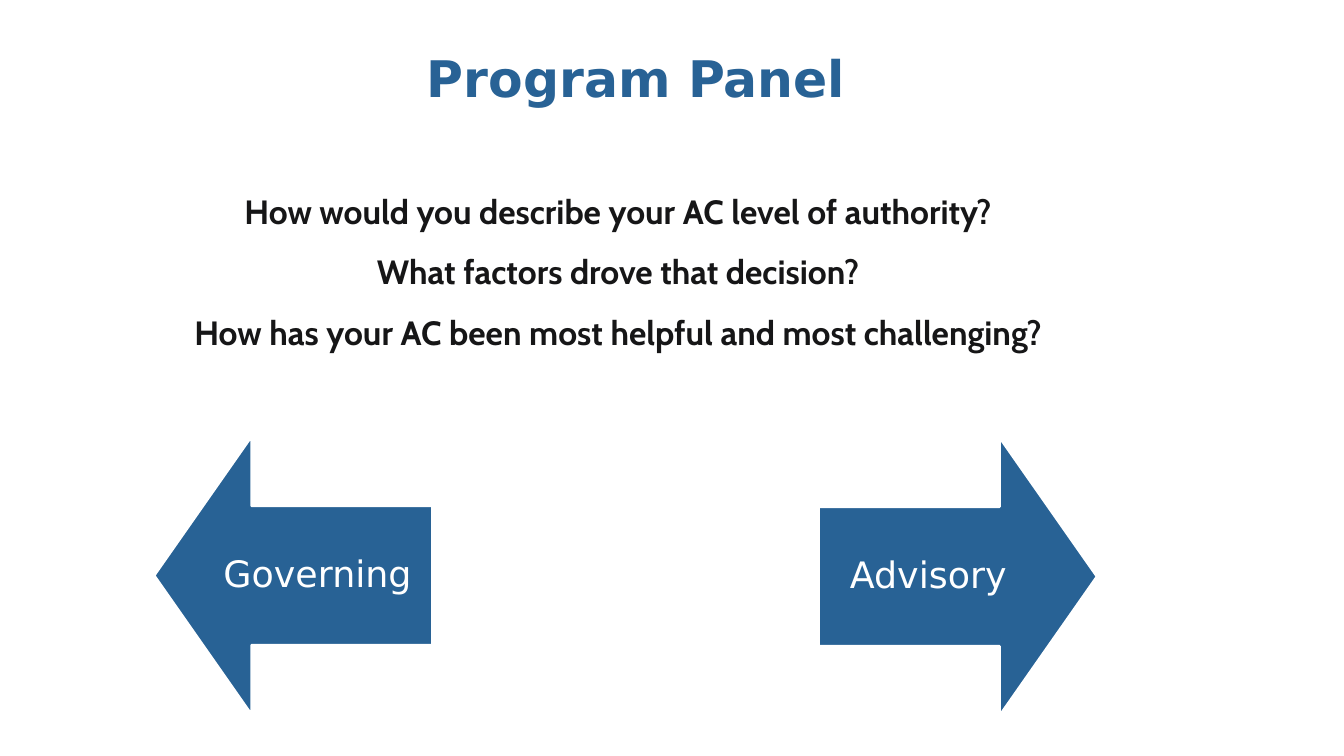
"""Build the Program Panel slide with its questions and two arrows."""
from pptx import Presentation
from pptx.dml.color import RGBColor
from pptx.enum.shapes import MSO_SHAPE
from pptx.enum.text import MSO_ANCHOR, PP_ALIGN
from pptx.util import Inches, Pt

LEFT, RIGHT = MSO_SHAPE.LEFT_ARROW, MSO_SHAPE.RIGHT_ARROW
TOP, MIDDLE, BOTTOM = MSO_ANCHOR.TOP, MSO_ANCHOR.MIDDLE, MSO_ANCHOR.BOTTOM
CENTER = PP_ALIGN.CENTER

BLUE, BLACK, WHITE = "286295", "161617", "FFFFFF"
SANS, CABIN = "DejaVu Sans", "Cabin"

TITLE = ["Program Panel"]
ASKS = [
    "How would you describe your AC level of authority?",
    "What factors drove that decision?",
    "How has your AC been most helpful and most challenging?",
]
ARROWS = [
    ("Governing", LEFT, 1.53, 4.33, 0.1),
    ("Advisory", RIGHT, 8.12, 4.34, 0.2),
]
SIZE = 2.76


def color(code):
    return RGBColor.from_string(code)


def write(shape, lines, font, size, code, bold, space, anchor):
    frame = shape.text_frame
    frame.word_wrap = True
    frame.vertical_anchor = anchor
    frame.text = "\n".join(lines)
    for para in frame.paragraphs:
        para.alignment = CENTER
        para.line_spacing = space
        para.font.name = font
        para.font.size = Pt(size)
        para.font.bold = bold
        para.font.color.rgb = color(code)


def add_text(slide, box, *style):
    write(slide.shapes.add_textbox(*map(Inches, box)), *style)


def add_arrow(slide, label, kind, x, y, inset):
    arrow = slide.shapes.add_shape(
        kind, Inches(x), Inches(y), Inches(SIZE), Inches(SIZE))
    arrow.adjustments[0] = 0.5
    arrow.adjustments[1] = 0.35
    arrow.shadow.inherit = False
    arrow.fill.solid()
    arrow.fill.fore_color.rgb = color(BLUE)
    arrow.line.color.rgb = color(WHITE)
    arrow.line.width = Pt(1.75)
    arrow.text_frame.margin_right = Inches(inset)
    write(arrow, [label], SANS, 26, WHITE, False, 0.9, MIDDLE)


def main():
    deck = Presentation()
    deck.slide_width, deck.slide_height = Inches(13.33), Inches(7.5)
    slide = deck.slides.add_slide(deck.slide_layouts[6])
    for item in ARROWS:
        add_arrow(slide, *item)
    add_text(slide, (0.7, 1.79, 10.86, 1.75),
             ASKS, CABIN, 24, BLACK, True, 1.5, BOTTOM)
    add_text(slide, (3.29, 0.42, 6.04, 0.81),
             TITLE, SANS, 36, BLUE, True, 1.0, TOP)
    deck.save("out.pptx")


if __name__ == "__main__":
    main()
